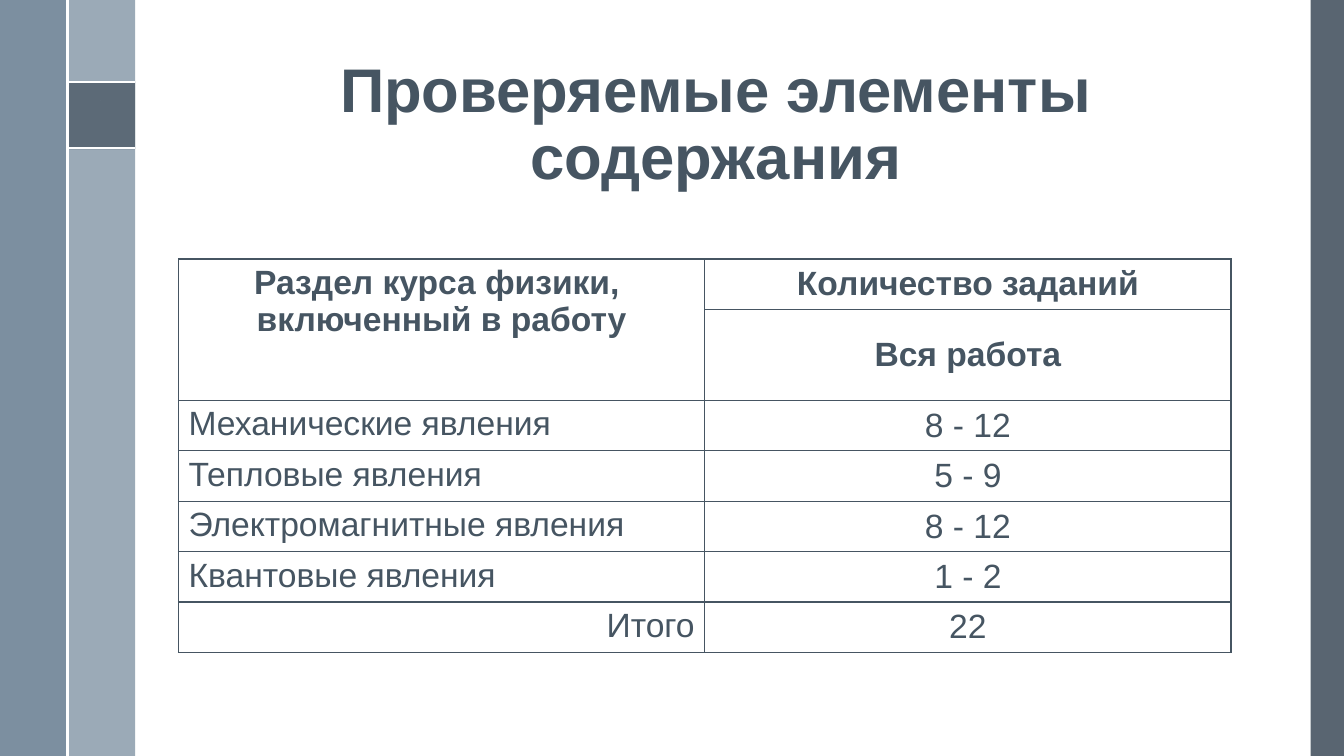
from lxml import etree
from pptx import Presentation
from pptx import util as u
from pptx.dml.color import RGBColor
from pptx.enum import shapes, text
from pptx.oxml.ns import qn

COLORS = {"ink": "465562", "dark": "475562", "steel": "6A8093",
          "mist": "9BAAB7", "white": "FFFFFF"}
FONT = "Arial"
LEFT, CENTER, RIGHT = text.PP_ALIGN.LEFT, text.PP_ALIGN.CENTER, text.PP_ALIGN.RIGHT
TOP, MIDDLE = text.MSO_ANCHOR.TOP, text.MSO_ANCHOR.MIDDLE


def paint(part, color, opacity=100):
    part.shadow.inherit = False
    part.line.fill.background()
    part.fill.solid()
    part.fill.fore_color.rgb = RGBColor.from_string(COLORS[color])
    if opacity < 100:
        tint = part.fill._xPr.find(qn("a:solidFill"))[0]
        etree.SubElement(tint, qn("a:alpha"), val=str(opacity * 1000))


def write(paragraph, lines, size, bold, align):
    paragraph.alignment = align
    for number, line in enumerate(lines.split("\n")):
        if number:
            paragraph.add_line_break()
        run = paragraph.add_run()
        run.text = line
        run.font.name = FONT
        run.font.size = u.Pt(size)
        run.font.bold = bold
        run.font.color.rgb = RGBColor.from_string(COLORS["ink"])


deck = Presentation()
deck.slide_width, deck.slide_height = u.Inches(13.33), u.Inches(7.5)
slide = deck.slides.add_slide(deck.slide_layouts[6])

bands = [(13, 0, 0.33, 7.5, "dark", 90), (0.67, 0, 0.67, 7.5, "mist", 100),
         (0, 0, 0.67, 7.5, "steel", 88), (0.67, 0.81, 0.67, 0.67, "dark", 75)]
for *box, color, opacity in bands:
    band = slide.shapes.add_shape(shapes.MSO_SHAPE.RECTANGLE, *map(u.Inches, box))
    paint(band, color, opacity)

for ends in [(0.67, 0.81, 1.34, 0.81), (0.67, 1.47, 1.34, 1.47), (0.67, 0, 0.67, 7.5)]:
    divider = slide.shapes.add_connector(shapes.MSO_CONNECTOR.STRAIGHT, *map(u.Inches, ends))
    divider.line.color.rgb = RGBColor.from_string(COLORS["white"])
    divider.line.width = u.Pt(1.5)
    etree.SubElement(divider._element.spPr, qn("a:effectLst"))

pi_outline = [
    (1.18, 0.98), (0.9, 0.98), (0.86, 1), (0.83, 1.04), (0.84, 1.05), (0.85, 1.05),
    (0.87, 1.02), (0.9, 1.01), (0.94, 1.01), (0.93, 1.11), (0.91, 1.21), (0.88, 1.27),
    (0.88, 1.29), (0.9, 1.29), (0.94, 1.21), (0.96, 1.11), (0.97, 1.01), (1.06, 1.01),
    (1.05, 1.22), (1.05, 1.26), (1.07, 1.29), (1.1, 1.3), (1.12, 1.3), (1.16, 1.28),
    (1.19, 1.22), (1.18, 1.21), (1.16, 1.22), (1.14, 1.26), (1.11, 1.28), (1.08, 1.27),
    (1.07, 1.22), (1.09, 1.01), (1.18, 1.01), (1.19, 1)]
pen = slide.shapes.build_freeform(*pi_outline[0], scale=u.Inches(1))
pen.add_line_segments(pi_outline[1:], close=True)
paint(pen.convert_to_shape(), "white")

title = slide.shapes.add_textbox(*map(u.Inches, (1.75, 0.6, 10.7, 1.36))).text_frame
title.word_wrap = True
title.vertical_anchor = text.MSO_ANCHOR.BOTTOM
title.paragraphs[0].line_spacing = 0.9
write(title.paragraphs[0], "Проверяемые элементы содержания", 44, True, CENTER)

rows = [("Раздел курса физики, \nвключенный в работу", "Количество заданий"),
        ("", "Вся работа"),
        ("Механические явления", "8 - 12"),
        ("Тепловые явления", "5 - 9"),
        ("Электромагнитные явления", "8 - 12"),
        ("Квантовые явления", "1 - 2"),
        ("Итого", "22")]
frame = slide.shapes.add_table(len(rows), 2, *map(u.Inches, (1.77, 2.57, 10.44, 3.66)))
sections = frame.table
sections.first_row = sections.horz_banding = False
for column in sections.columns:
    column.width = u.Inches(5.22)
sections.cell(0, 0).merge(sections.cell(1, 0))

for r, row in enumerate(rows):
    sections.rows[r].height = u.Inches(0.84 if r == 1 else 0.47)
    for c, words in enumerate(row):
        cell = sections.cell(r, c)
        cell.fill.background()
        cell.vertical_anchor = MIDDLE if c else TOP
        if words:
            align = CENTER if c or r < 2 else RIGHT if r == len(rows) - 1 else LEFT
            write(cell.text_frame.paragraphs[0], words, 24, r < 2, align)
        properties = cell._tc.get_or_add_tcPr()
        for position, side in enumerate(("lnL", "lnR", "lnT", "lnB")):
            border = etree.Element(qn("a:" + side), w=str(u.Pt(1)))
            stroke = etree.SubElement(border, qn("a:solidFill"))
            etree.SubElement(stroke, qn("a:srgbClr"), val=COLORS["ink"])
            properties.insert(position, border)

deck.save("out.pptx")
